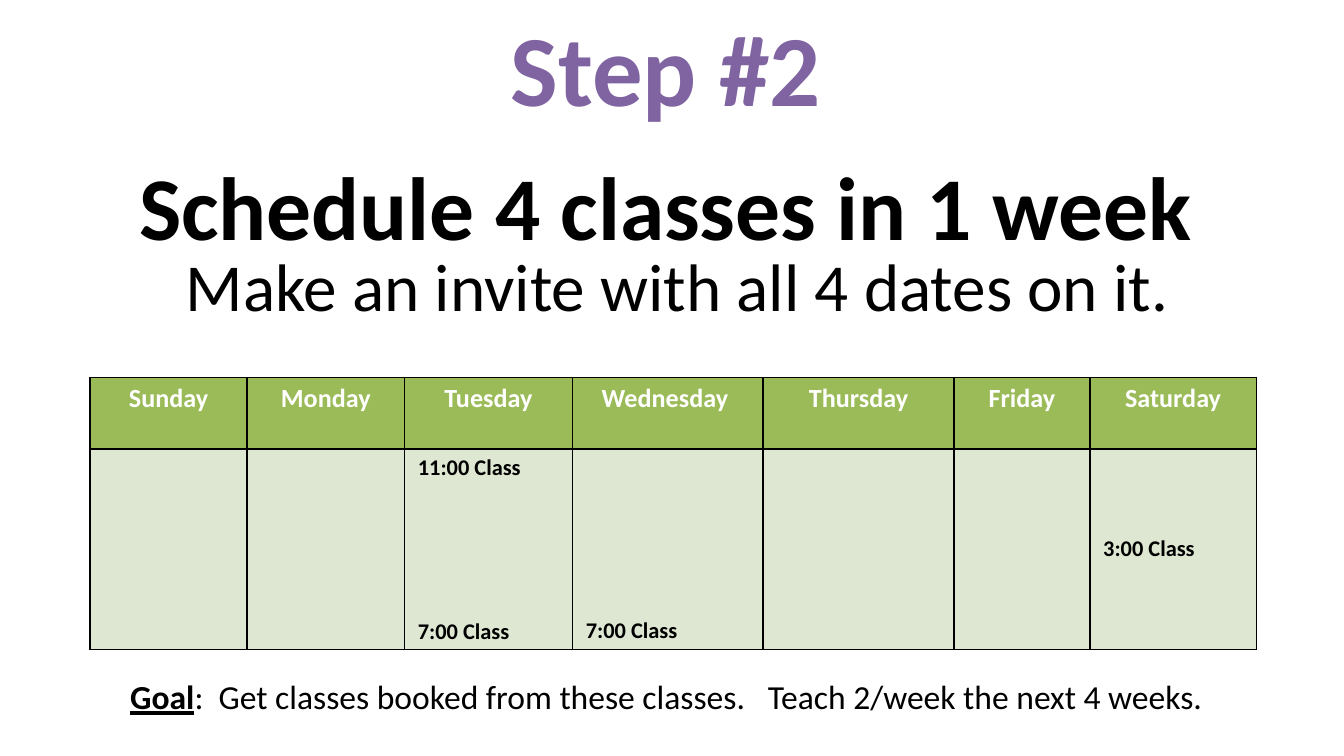
from dataclasses import dataclass

from lxml.etree import SubElement
from pptx import Presentation
from pptx.dml.color import RGBColor
from pptx.enum.text import MSO_ANCHOR, MSO_AUTO_SIZE, PP_ALIGN
from pptx.oxml.ns import qn
from pptx.util import Inches, Pt


@dataclass(frozen=True)
class Theme:
    font: str = "Calibri"
    ink: str = "000000"
    accent: str = "8064A2"
    header_ink: str = "FFFFFF"
    header_fill: str = "9BBB59"
    body_fill: str = "DEE7D1"
    step_size: int = 54
    headline_size: int = 48
    title_size: int = 36
    goal_size: int = 18
    header_size: int = 14
    entry_size: int = 12
    border_width: int = 1


def apply(target, values):
    for name, value in values.items():
        setattr(target, name, value)


class SlideBuilder:
    def __init__(self, slide, theme):
        self.slide = slide
        self.theme = theme

    def span(self, para, text, size, color=None, bold=False, underline=False):
        span = para.add_run()
        span.text = text
        apply(span.font, {"name": self.theme.font, "size": Pt(size),
                          "bold": bold, "underline": underline})
        span.font.color.rgb = RGBColor.from_string(color or self.theme.ink)

    def paragraphs(self, frame, lines, align=PP_ALIGN.CENTER):
        for index, (spans, space) in enumerate(lines):
            para = frame.add_paragraph() if index else frame.paragraphs[0]
            apply(para, {"alignment": align, "space_before": Pt(space)})
            for values in spans:
                self.span(para, **values)

    def place(self, shape, left, top, width, height):
        apply(shape, {"left": Inches(left), "top": Inches(top),
                      "width": Inches(width), "height": Inches(height)})

    def title(self, text, bounds):
        title = self.slide.shapes.title
        self.place(title, *bounds)
        apply(title.text_frame, {"word_wrap": True,
                                 "auto_size": MSO_AUTO_SIZE.NONE,
                                 "vertical_anchor": MSO_ANCHOR.MIDDLE})
        spans = [{"text": text, "size": self.theme.title_size}]
        self.paragraphs(title.text_frame, [(spans, 0)])

    def text(self, lines, bounds):
        box = self.slide.shapes.add_textbox(*map(Inches, bounds))
        box.text_frame.word_wrap = True
        self.paragraphs(box.text_frame, lines)

    def cell(self, cell, fill):
        apply(cell, {"margin_top": Inches(0.04), "margin_bottom": Inches(0.04)})
        properties = cell._tc.get_or_add_tcPr()
        for side in ("a:lnL", "a:lnR", "a:lnT", "a:lnB"):
            line = SubElement(properties, qn(side), w=str(Pt(self.theme.border_width)))
            paint = SubElement(line, qn("a:solidFill"))
            SubElement(paint, qn("a:srgbClr"), val=self.theme.ink)
        cell.fill.solid()
        cell.fill.fore_color.rgb = RGBColor.from_string(fill)

    def calendar(self, days, entries, widths, heights, left, top):
        frame = self.slide.shapes.add_table(
            len(heights), len(days), Inches(left), Inches(top),
            Inches(sum(widths)), Inches(sum(heights)))
        table = frame.table
        for column, width in zip(table.columns, widths):
            column.width = Inches(width)
        for row, height in zip(table.rows, heights):
            row.height = Inches(height)
        for index, day in enumerate(days):
            header, body = table.cell(0, index), table.cell(1, index)
            self.cell(header, self.theme.header_fill)
            self.cell(body, self.theme.body_fill)
            spans = [{"text": day, "size": self.theme.header_size,
                      "color": self.theme.header_ink, "bold": True}]
            self.paragraphs(header.text_frame, [(spans, 0)])
            if day in entries:
                anchor, times = entries[day]
                body.vertical_anchor = anchor
                lines = [([{"text": f"{time} Class", "size": self.theme.entry_size,
                            "bold": True}], space) for time, space in times]
                self.paragraphs(body.text_frame, lines, PP_ALIGN.LEFT)


def main():
    theme = Theme()
    deck = Presentation()
    apply(deck, {"slide_width": Inches(10), "slide_height": Inches(10) * 9 // 16})
    page = SlideBuilder(deck.slides.add_slide(deck.slide_layouts[5]), theme)

    page.title("Make an invite with all 4 dates on it.", (0.5, 1.73, 9.08, 0.77))
    page.text([
        ([{"text": "Step #2", "size": theme.step_size,
           "color": theme.accent, "bold": True}], 0),
        ([{"text": "Schedule 4 classes in 1 week",
           "size": theme.headline_size, "bold": True}], 13),
    ], (0.33, -0.01, 9.25, 1.5))
    page.calendar(
        days=["Sunday", "Monday", "Tuesday", "Wednesday ", "Thursday",
              "Friday", "Saturday"],
        entries={
            "Tuesday": (MSO_ANCHOR.TOP, [("11:00", 0), ("7:00", 73)]),
            "Wednesday ": (MSO_ANCHOR.BOTTOM, [("7:00", 0)]),
            "Saturday": (MSO_ANCHOR.MIDDLE, [("3:00", 0)]),
        },
        widths=[1.17, 1.17, 1.25, 1.42, 1.42, 1.01, 1.24],
        heights=[0.53, 1.49], left=0.67, top=2.81)
    page.text([
        ([{"text": "Goal", "size": theme.goal_size, "bold": True, "underline": True},
          {"text": ":  Get classes booked from these classes.   "
                   "Teach 2/week the next 4 weeks.", "size": theme.goal_size}], 0),
    ], (0.42, 4.98, 9.08, 0.4))
    deck.save("out.pptx")


if __name__ == "__main__":
    main()
